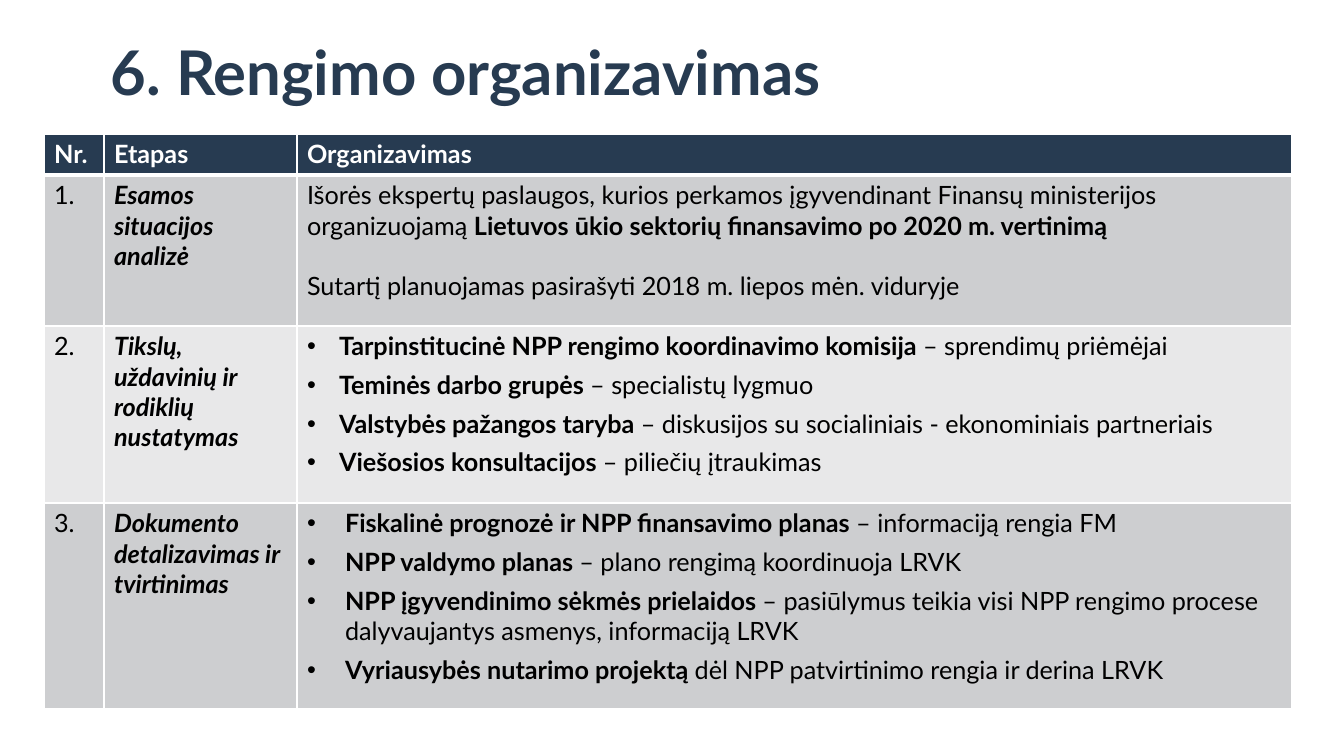
from lxml.etree import SubElement
from pptx import Presentation
from pptx.dml.color import RGBColor
from pptx.enum.text import MSO_ANCHOR
from pptx.oxml.ns import qn
from pptx.util import Emu, Pt

NAVY, WHITE, BLACK = "273B51", "FFFFFF", "000000"
BANDS = ["CDCED0", "E8E8E9"]
COLUMNS = [60, 193, 995]
ROWS = [41, 151, 177, 206]
HEADINGS = ["Nr.", "Etapas", "Organizavimas"]

# Each stage: name, bullet indent, gap between paragraphs, paragraphs of (text, bold) runs
STAGES = [
    ("Esamos situacijos analizė", 0, 21.6, [
        [("Išorės ekspertų paslaugos, kurios perkamos įgyvendinant Finansų ministerijos "
          "organizuojamą ", False),
         ("Lietuvos ūkio sektorių finansavimo po 2020 m. vertinimą", True)],
        [("Sutartį planuojamas pasirašyti 2018 m. liepos mėn. viduryje", False)],
    ]),
    ("Tikslų, uždavinių ir rodiklių nustatymas", 32, 6, [
        [("Tarpinstitucinė NPP rengimo koordinavimo komisija ", True),
         ("– sprendimų priėmėjai", False)],
        [("Teminės darbo grupės ", True), ("– specialistų lygmuo", False)],
        [("Valstybės pažangos taryba ", True),
         ("– diskusijos su socialiniais - ekonominiais partneriais", False)],
        [("Viešosios konsultacijos ", True), ("– piliečių įtraukimas", False)],
    ]),
    ("Dokumento detalizavimas ir tvirtinimas", 38, 6, [
        [("Fiskalinė prognozė ir NPP finansavimo planas ", True),
         ("– informaciją rengia FM", False)],
        [("NPP valdymo planas ", True), ("– plano rengimą koordinuoja LRVK", False)],
        [("NPP įgyvendinimo sėkmės prielaidos ", True),
         ("– pasiūlymus teikia visi NPP rengimo procese dalyvaujantys asmenys, "
          "informaciją LRVK", False)],
        [("Vyriausybės nutarimo projektą ", True),
         ("dėl NPP patvirtinimo rengia ir derina LRVK", False)],
    ]),
]


def px(n):
    return Emu(round(n * 914400 / 100.8))


def rgb(color):
    return RGBColor.from_string(color)


def add_run(p, text, size=18, color=BLACK, bold=False, italic=False):
    r = p.add_run()
    r.text = text
    font = r.font
    font.name, font.size = "Lato", Pt(size)
    font.bold, font.italic = bold, italic
    font.color.rgb = rgb(color)


def add_bullet(p, indent):
    pPr = p._p.get_or_add_pPr()
    pPr.set("marL", str(px(indent)))
    pPr.set("indent", str(-px(indent)))
    SubElement(pPr, qn("a:buFont"), typeface="Arial")
    SubElement(pPr, qn("a:buChar"), char="•")


class SlideBuilder:
    def __init__(self, prs):
        self.slide = prs.slides.add_slide(prs.slide_layouts[6])

    def title(self, text, x, y, w, h):
        tf = self.slide.shapes.add_textbox(px(x), px(y), px(w), px(h)).text_frame
        tf.word_wrap = True
        tf.vertical_anchor = MSO_ANCHOR.MIDDLE
        p = tf.paragraphs[0]
        p.line_spacing = 0.9
        add_run(p, text, size=44, color=NAVY, bold=True)

    def table(self, x, y, columns, rows):
        shape = self.slide.shapes.add_table(len(rows), len(columns), px(x), px(y),
                                            px(sum(columns)), px(sum(rows)))
        table = shape.table
        table.first_row = table.horz_banding = False
        for column, width in zip(table.columns, columns):
            column.width = px(width)
        for row, height in zip(table.rows, rows):
            row.height = px(height)
        return table

    def cell(self, cell, fill, paragraphs, indent=0, gap=0, top=1, bottom=1, **style):
        """Fill a cell with paragraphs, each a list of (text, bold) runs."""
        tcPr = cell._tc.get_or_add_tcPr()
        for side, width in zip("LRTB", (1, 1, top, bottom)):
            ln = SubElement(tcPr, qn(f"a:ln{side}"), w=str(Pt(width)))
            SubElement(SubElement(ln, qn("a:solidFill")), qn("a:srgbClr"), val=WHITE)
        cell.fill.solid()
        cell.fill.fore_color.rgb = rgb(fill)
        tf = cell.text_frame
        for i, runs in enumerate(paragraphs):
            p = tf.add_paragraph() if i else tf.paragraphs[0]
            if i:
                p.space_before = Pt(gap)
            if indent:
                add_bullet(p, indent)
            for text, bold in runs:
                add_run(p, text, bold=bold, **style)


def main():
    prs = Presentation()
    prs.slide_width, prs.slide_height = px(1344), px(756)
    s = SlideBuilder(prs)
    s.title("6. Rengimo organizavimas", 101, 31, 1142, 90)

    table = s.table(44, 134, COLUMNS, ROWS)
    for col, heading in enumerate(HEADINGS):
        s.cell(table.cell(0, col), NAVY, [[(heading, True)]], bottom=3, color=WHITE)
    for row, (name, indent, gap, paragraphs) in enumerate(STAGES, 1):
        fill = BANDS[(row - 1) % 2]
        top = 3 if row == 1 else 1
        s.cell(table.cell(row, 0), fill, [[(f"{row}.", False)]], top=top)
        s.cell(table.cell(row, 1), fill, [[(name, True)]], top=top, italic=True)
        s.cell(table.cell(row, 2), fill, paragraphs, indent, gap, top=top)
    prs.save("out.pptx")


if __name__ == "__main__":
    main()
